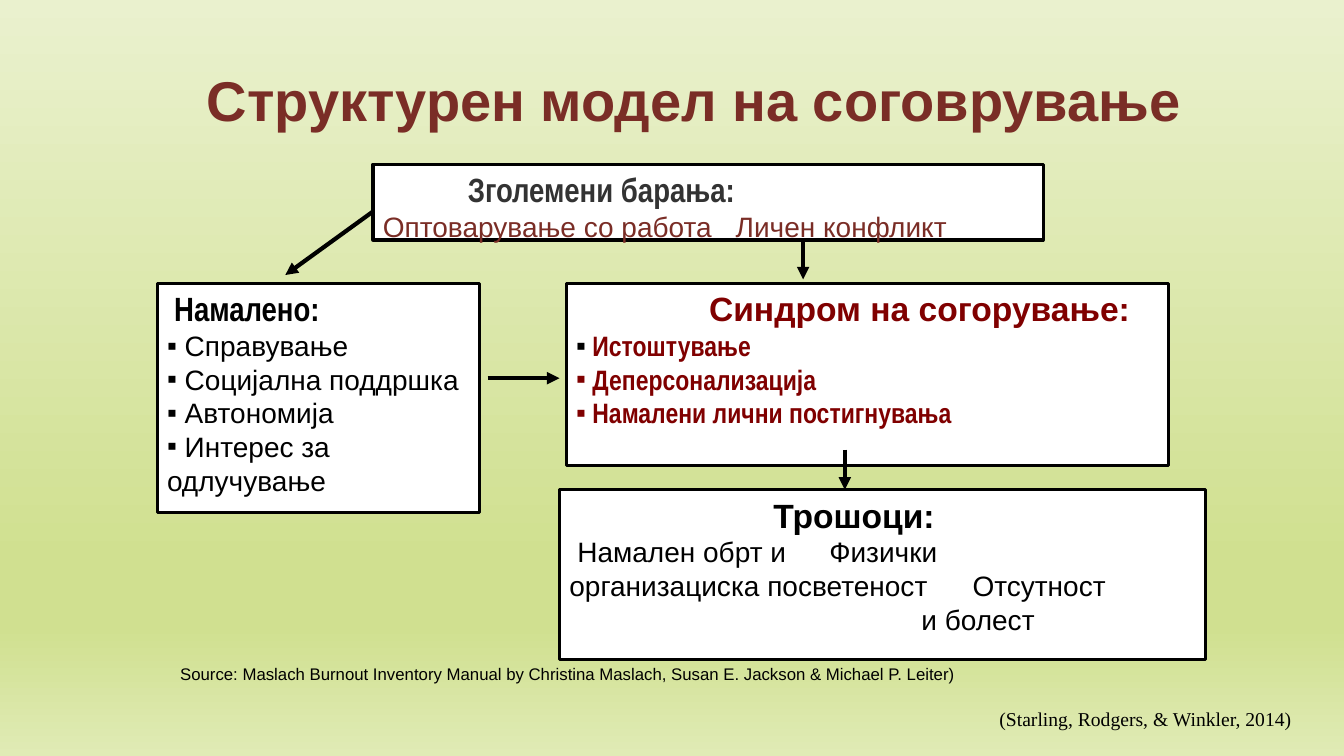
from dataclasses import dataclass
from lxml.etree import SubElement
from pptx import Presentation
from pptx.dml.color import RGBColor
from pptx.enum.shapes import MSO_CONNECTOR as Connector, MSO_SHAPE as Shape
from pptx.enum.text import MSO_ANCHOR as Anchor, MSO_AUTO_SIZE as AutoSize, PP_ALIGN as Align
from pptx.oxml.ns import qn
from pptx.util import Cm, Pt

BLACK, WHITE, MAROON, BROWN, GREY = "000000", "FFFFFF", "800000", "7A2D26", "333333"
SKY = [(0, "EAF1CE"), (74, "D0E090"), (83, "D0E090"), (100, "E0EBB5")]


@dataclass
class Line:
    """One paragraph and its look; indent and tab are in centimetres."""
    text: str
    size: int = 20
    font: str = "Arial"
    color: str = BLACK
    bold: bool = False
    indent: float = 0
    tab: float = 0
    bullet: str = ""


def rgb(value):
    """Turn a hex string into a colour."""
    return RGBColor.from_string(value)


def add_xml(parent, tag, **attributes):
    """Append a DrawingML element."""
    return SubElement(parent, qn(f"a:{tag}"), attributes)


def paint_background(slide):
    """Fill the slide with the vertical green gradient."""
    fill = slide.background.fill
    fill.gradient()
    fill.gradient_angle = 270
    stops = slide.background._cSld.find(".//" + qn("a:gsLst"))
    stops.clear()
    for percent, color in SKY:
        stop = add_xml(stops, "gs", pos=str(percent * 1000))
        add_xml(stop, "srgbClr", val=color)


def write_line(paragraph, line):
    """Write and format one paragraph."""
    paragraph.text = line.text
    properties = paragraph._p.get_or_add_pPr()
    properties.set("marL", str(Cm(line.indent)))
    properties.set("indent", "0")
    if line.bullet:
        add_xml(add_xml(properties, "buClr"), "srgbClr", val=line.bullet)
        add_xml(properties, "buFont", typeface="Arial")
        add_xml(properties, "buChar", char="▪")
    if line.tab:
        tabs = add_xml(properties, "tabLst")
        add_xml(tabs, "tab", pos=str(Cm(line.tab)), algn="l")
    for run in paragraph.runs:
        run.font.size = Pt(line.size)
        run.font.name = line.font
        run.font.bold = line.bold
        run.font.color.rgb = rgb(line.color)


def write_lines(frame, lines, align=Align.LEFT, anchor=Anchor.TOP):
    """Fill a text frame with paragraphs."""
    frame.word_wrap = True
    frame.auto_size = AutoSize.NONE
    frame.vertical_anchor = anchor
    for number, line in enumerate(lines):
        paragraph = frame.add_paragraph() if number else frame.paragraphs[0]
        write_line(paragraph, line)
        paragraph.alignment = align


def add_title(slide, left, top, width, height):
    """Place the slide title."""
    title = slide.shapes.title
    title.left, title.top, title.width, title.height = map(Cm, (left, top, width, height))
    heading = Line("Структурен модел на соговрување", 40, color=BROWN, bold=True)
    write_lines(title.text_frame, [heading], Align.CENTER, Anchor.MIDDLE)


def add_panel(slide, box, lines):
    """Draw a white framed panel with its text."""
    panel = slide.shapes.add_shape(Shape.RECTANGLE, *map(Cm, box))
    panel.shadow.inherit = False
    panel.fill.solid()
    panel.fill.fore_color.rgb = rgb(WHITE)
    panel.line.color.rgb = rgb(BLACK)
    panel.line.width = Pt(2.25)
    write_lines(panel.text_frame, lines)


def add_demands(slide, *box):
    """Place the panel of increased demands."""
    add_panel(slide, box, [
        Line("Зголемени барања:", 24, "Arial Narrow", GREY, True, indent=2.14),
        Line("Оптоварување со работа\tЛичен конфликт", color=BROWN, tab=9.47),
    ])


def add_resources(slide, *box):
    """Place the panel of reduced resources."""
    items = ["Справување", "Социјална поддршка", "Автономија", "Интерес за одлучување"]
    heading = Line("Намалено:", 24, "Arial Narrow", bold=True, indent=0.18)
    add_panel(slide, box, [heading] + [Line(f" {item}", bullet=BLACK) for item in items])


def add_syndrome(slide, *box):
    """Place the panel of the burnout syndrome."""
    items = [("Истоштување", BLACK), ("Деперсонализација", MAROON),
             ("Намалени лични постигнувања", MAROON)]
    heading = Line("Синдром на согорување:", 24, color=MAROON, bold=True, indent=3.35)
    add_panel(slide, box, [heading] + [
        Line(f" {item}", 20, "Arial Narrow", MAROON, True, bullet=mark) for item, mark in items])


def add_costs(slide, *box):
    """Place the panel of costs."""
    add_panel(slide, box, [
        Line("Трошоци:", 24, bold=True, indent=5.14),
        Line("Намален обрт и\tФизички", indent=0.2, tab=11.42),
        Line("организациска посветеност\tОтсутност", tab=11.14),
        Line("и болест", indent=8.87),
    ])


def add_note(slide, box, line, align):
    """Place a line of reference text."""
    note = slide.shapes.add_textbox(*map(Cm, box))
    write_lines(note.text_frame, [line], align)


def add_arrow(slide, *ends):
    """Draw a black arrow between two points."""
    arrow = slide.shapes.add_connector(Connector.STRAIGHT, *map(Cm, ends))
    arrow.line.color.rgb = rgb(BLACK)
    arrow.line.width = Pt(3)
    add_xml(arrow.line._get_or_add_ln(), "tailEnd", type="triangle")
    add_xml(arrow._element.spPr, "effectLst")


def build_model(slide):
    """Lay out the structural model of burnout."""
    paint_background(slide)
    add_title(slide, 4.44, 0.91, 26.09, 3.18)
    add_resources(slide, 3.96, 7.14, 8.13, 5.77)
    add_demands(slide, 9.4, 4.14, 16.89, 1.91)
    add_syndrome(slide, 14.27, 7.14, 15.19, 4.6)
    add_costs(slide, 14.1, 12.34, 16.28, 4.27)
    add_arrow(slide, 20.24, 6.05, 20.24, 7.04)
    add_arrow(slide, 21.29, 11.33, 21.29, 12.34)
    add_arrow(slide, 12.29, 9.53, 14.1, 9.53)
    add_arrow(slide, 9.4, 5.33, 7.19, 6.93)
    source = ("Source: Maslach Burnout Inventory Manual by Christina Maslach, "
              "Susan E. Jackson & Michael P. Leiter)")
    add_note(slide, (4.29, 16.59, 24.21, 0.8), Line(source, 12), Align.LEFT)
    citation = Line("(Starling, Rodgers, & Winkler, 2014)", 14, "Times New Roman")
    add_note(slide, (24.87, 17.7, 8, 0.86), citation, Align.CENTER)


def main():
    """Build and save the presentation."""
    presentation = Presentation()
    presentation.slide_width, presentation.slide_height = Cm(33.87), Cm(19.05)
    build_model(presentation.slides.add_slide(presentation.slide_layouts[5]))
    presentation.save("out.pptx")


if __name__ == "__main__":
    main()
